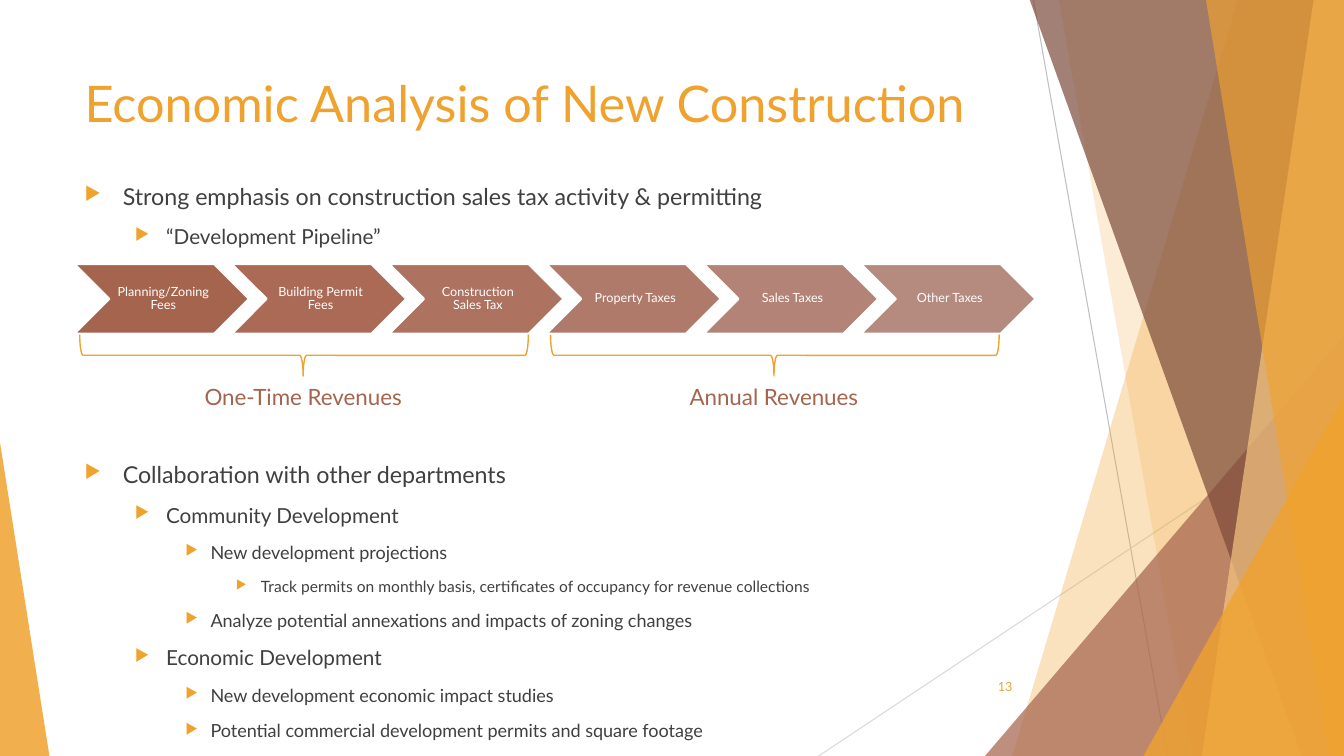
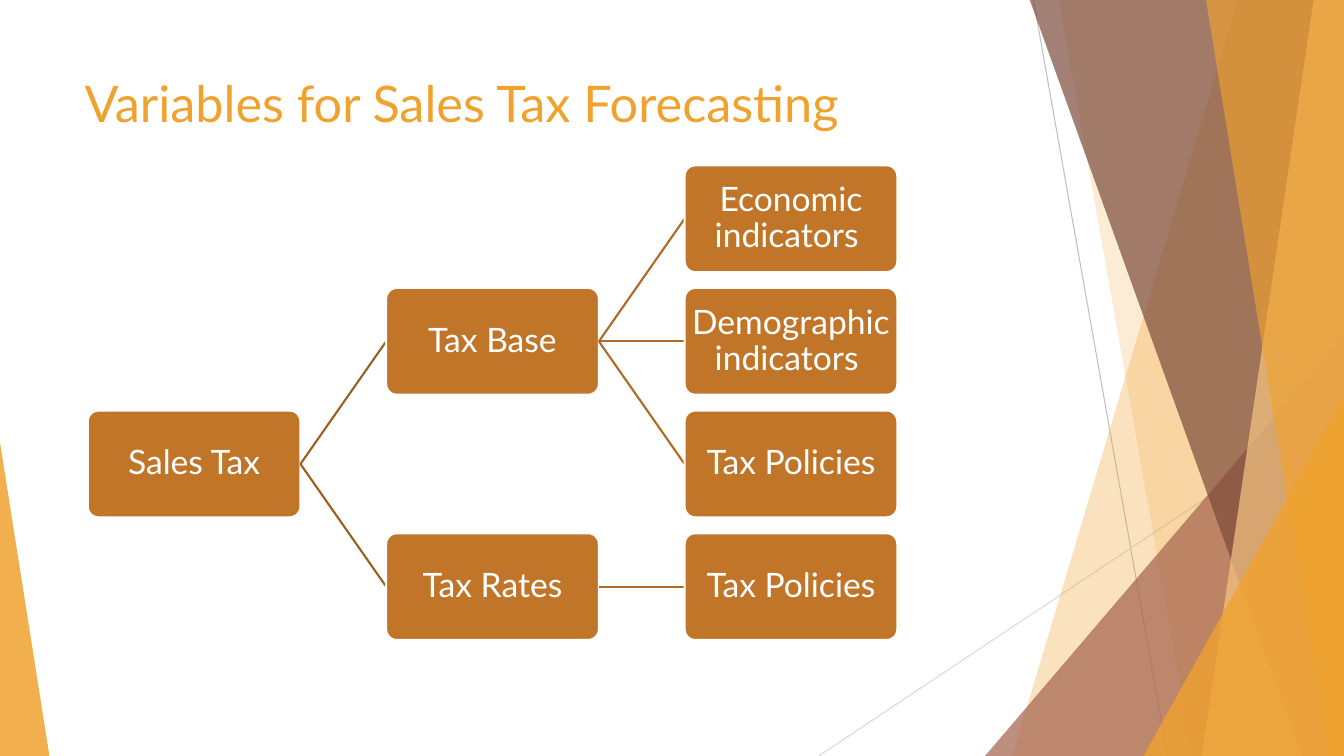
"""Build two slides on the economics of construction and sales tax forecasting."""
from dataclasses import dataclass
from typing import Any

from pptx import Presentation
from pptx import util as u
from pptx.dml import color
from pptx.enum import shapes, text
from pptx.oxml import xmlchemy

WIDTH, HEIGHT = 13.33, 7.5
FONT = "Lato"
COLORS = {
    "amber": "F0A22E",
    "sand": "F6C782",
    "rust": "A5644E",
    "brown": "7C4B3B",
    "ink": "404040",
    "white": "FFFFFF",
    "gray": "BFBFBF",
    "pale_gray": "D9D9D9",
    "node": "C17529",
    "first_link": "9B5E21",
    "second_link": "AF6A25",
    "step_1": "A5644E",
    "step_2": "AB6A55",
    "step_3": "AD7260",
    "step_4": "B07A6B",
    "step_5": "B28376",
    "step_6": "B58B80",
}
BOX_FORMAT = {"word_wrap": True, "vertical_anchor": text.MSO_ANCHOR.TOP}
LABEL_FORMAT = {"word_wrap": False}
NUMBER_FORMAT = {"word_wrap": True, "vertical_anchor": text.MSO_ANCHOR.MIDDLE}
CENTERED = {"alignment": text.PP_ALIGN.CENTER, "line_spacing": 0.9}


@dataclass(frozen=True)
class Band:
    top: float
    bottom: float
    color: str
    alpha: int


@dataclass(frozen=True)
class Triangle:
    left: float
    top: float
    width: float
    apex: float
    color: str
    alpha: int


@dataclass(frozen=True)
class Level:
    margin: float
    hanging: float
    size: float


@dataclass(frozen=True)
class Bullet:
    level: int
    words: str
    before: float = 10


@dataclass(frozen=True)
class Group:
    words: str
    brace_left: float
    label_left: float
    label_width: float


@dataclass(frozen=True)
class Node:
    words: str
    column: int
    row: int
    children: tuple["Node", ...] = ()


BACKDROP = (
    Band(12.28, 10.04, "amber", 30),
    Band(10.5, 11.83, "amber", 20),
    Triangle(9.77, 3.33, 3.56, 1, "rust", 72),
    Band(10.21, 12.91, "brown", 70),
    Band(13.03, 11.92, "sand", 70),
    Band(11.96, 13.18, "amber", 65),
    Triangle(11.34, 3.93, 1.99, 1, "amber", 80),
    Triangle(0, 4.39, 0.49, 0, "amber", 85),
)
LEVELS = (
    Level(0.38, 0.38, 16.6),
    Level(0.81, 0.31, 14.8),
    Level(1.25, 0.25, 12.9),
    Level(1.75, 0.25, 11.1),
)
BULLETS = (
    Bullet(0, "Strong emphasis on construction sales tax activity & permitting"),
    Bullet(1, "“Development Pipeline”"),
    Bullet(0, "Collaboration with other departments", 151),
    Bullet(1, "Community Development"),
    Bullet(2, "New development projections"),
    Bullet(3, "Track permits on monthly basis, certificates of occupancy for revenue collections"),
    Bullet(2, "Analyze potential annexations and impacts of zoning changes"),
    Bullet(1, "Economic Development"),
    Bullet(2, "New development economic impact studies"),
    Bullet(2, "Potential commercial development permits and square footage"),
)
STEPS = (
    "Planning/Zoning Fees",
    "Building Permit Fees",
    "Construction Sales Tax",
    "Property Taxes",
    "Sales Taxes",
    "Other Taxes",
)
GROUPS = (
    Group("One-Time Revenues", 2.81, 1.93, 2.18),
    Group("Annual Revenues", 7.48, 6.74, 1.89),
)
TREE = Node("Sales Tax", 0, 2, (
    Node("Tax Base", 1, 1, (
        Node("Economic indicators ", 2, 0),
        Node("Demographic indicators ", 2, 1),
        Node("Tax Policies", 2, 2),
    )),
    Node("Tax Rates", 1, 3, (Node("Tax Policies", 2, 3),)),
))
LINK_COLORS = ("first_link", "second_link")


def rgb(name: str) -> color.RGBColor:
    """Return the named colour."""
    return color.RGBColor.from_string(COLORS[name])


def apply_format(target: Any, values: dict[str, Any]) -> None:
    """Set every attribute listed in the format values."""
    for name, value in values.items():
        setattr(target, name, value)


def add_child(parent: Any, tag: str, **attributes: str) -> Any:
    """Append an XML element with its attributes and return it."""
    child = xmlchemy.OxmlElement(tag)
    for name, value in attributes.items():
        child.set(name, value)
    parent.append(child)
    return child


def write(paragraph: Any, words: str, size: float, name: str, **values: Any) -> None:
    """Write one run and format its paragraph."""
    run = paragraph.add_run()
    run.text = words
    apply_format(run.font, {"name": FONT, "size": u.Pt(size)})
    run.font.color.rgb = rgb(name)
    apply_format(paragraph, values)


def paint(shape: Any, fill: str | None, line: str | None = None,
          width: float = 1.5, alpha: int = 100) -> None:
    """Set fill, outline and transparency and remove the shadow."""
    shape.shadow.inherit = False
    if fill:
        shape.fill.solid()
        shape.fill.fore_color.rgb = rgb(fill)
        if alpha < 100:
            tint = shape.element.spPr.find(".//" + xmlchemy.OxmlElement("a:srgbClr").tag)
            add_child(tint, "a:alpha", val=str(alpha * 1000))
    else:
        shape.fill.background()
    if line:
        shape.line.color.rgb = rgb(line)
        shape.line.width = u.Pt(width)
    else:
        shape.line.fill.background()


def add_preset(slide: Any, kind: Any, box: tuple[float, ...], *adjustments: float) -> Any:
    """Add a preset shape with its adjustments."""
    shape = slide.shapes.add_shape(kind, *map(u.Inches, box))
    for index, value in enumerate(adjustments):
        shape.adjustments[index] = value
    return shape


def add_line(slide: Any, ends: tuple[float, ...], name: str, width: float) -> Any:
    """Add a straight connector without a shadow."""
    connector = slide.shapes.add_connector(shapes.MSO_CONNECTOR.STRAIGHT, *map(u.Inches, ends))
    connector.line.color.rgb = rgb(name)
    connector.line.width = u.Pt(width)
    add_child(connector.element.spPr, "a:effectLst")
    return connector


def add_frame(slide: Any, box: tuple[float, ...], values: dict[str, Any]) -> Any:
    """Add a text box and return its text frame."""
    frame = slide.shapes.add_textbox(*map(u.Inches, box)).text_frame
    apply_format(frame, values)
    return frame


def label_shape(shape: Any, words: str, size: float, margins: tuple[float, ...]) -> None:
    """Centre white text inside a shape."""
    frame = shape.text_frame
    sides = ("margin_left", "margin_top", "margin_right", "margin_bottom")
    apply_format(frame, NUMBER_FORMAT | dict(zip(sides, map(u.Inches, margins))))
    write(frame.paragraphs[0], words, size, "white", **CENTERED)


def add_facet(slide: Any, facet: Band | Triangle) -> None:
    """Draw one translucent piece of the backdrop."""
    if isinstance(facet, Band):
        top = -0.01
        corners = ((WIDTH, top), (WIDTH, HEIGHT), (facet.bottom, HEIGHT))
        builder = slide.shapes.build_freeform(u.Inches(facet.top), u.Inches(top))
        builder.add_line_segments([(u.Inches(x), u.Inches(y)) for x, y in corners])
        shape = builder.convert_to_shape()
    else:
        box = (facet.left, facet.top, facet.width, HEIGHT - facet.top)
        shape = add_preset(slide, shapes.MSO_SHAPE.ISOSCELES_TRIANGLE, box, facet.apex)
    paint(shape, facet.color, alpha=facet.alpha)


def add_slide(presentation: Any, title: str) -> Any:
    """Add a slide with the shared backdrop and title."""
    slide = presentation.slides.add_slide(presentation.slide_layouts[6])
    add_line(slide, (10.25, 0, 11.58, HEIGHT), "gray", 0.75)
    add_line(slide, (WIDTH, 4.03, 8.12, HEIGHT), "pale_gray", 0.75)
    for facet in BACKDROP:
        add_facet(slide, facet)
    frame = add_frame(slide, (0.74, 0.67, 9.4, 1.44), BOX_FORMAT)
    write(frame.paragraphs[0], title, 36, "amber")
    return slide


def add_bullets(slide: Any) -> None:
    """Write the outline with triangular bullets."""
    frame = add_frame(slide, (0.74, 1.76, 9.17, 5.4), BOX_FORMAT)
    for index, bullet in enumerate(BULLETS):
        level = LEVELS[bullet.level]
        paragraph = frame.add_paragraph() if index else frame.paragraphs[0]
        write(paragraph, bullet.words, level.size, "ink",
              level=bullet.level, space_before=u.Pt(bullet.before))
        properties = paragraph._p.get_or_add_pPr()
        properties.set("marL", str(u.Inches(level.margin)))
        properties.set("indent", str(-u.Inches(level.hanging)))
        add_child(add_child(properties, "a:buClr"), "a:srgbClr", val=COLORS["amber"])
        add_child(properties, "a:buSzPct", val="80000")
        add_child(properties, "a:buChar", char="▶")


def add_pipeline(slide: Any) -> None:
    """Draw the chevrons with the braces that group them."""
    for index, words in enumerate(STEPS):
        box = (0.74 + 1.56 * index, 2.62, 1.73, 0.69)
        chevron = add_preset(slide, shapes.MSO_SHAPE.CHEVRON, box)
        paint(chevron, f"step_{index + 1}", "white")
        label_shape(chevron, words, 9, (0.04, 0.01, 0.01, 0.01))
    for group in GROUPS:
        box = (group.brace_left, 1.3, 0.41, 4.45)
        brace = add_preset(slide, shapes.MSO_SHAPE.RIGHT_BRACE, box, 0.083, 0.502)
        brace.rotation = 90
        paint(brace, None, "amber", 1)
        frame = add_frame(slide, (group.label_left, 3.75, group.label_width, 0.37), LABEL_FORMAT)
        write(frame.paragraphs[0], group.words, 16, "rust")


def add_node(slide: Any, node: Node) -> Any:
    """Draw a tree node and, joined to it, its children."""
    box = (0.87 + 2.96 * node.column, 1.64 + 3.65 / 3 * node.row, 2.11, 1.06)
    shape = add_preset(slide, shapes.MSO_SHAPE.ROUNDED_RECTANGLE, box, 0.1)
    paint(shape, "node", "white")
    label_shape(shape, node.words, 24, (0.02,) * 4)
    for child in node.children:
        link = add_line(slide, (0, 0, 0, 0), LINK_COLORS[node.column], 1.5)
        link.begin_connect(shape, 3)
        link.end_connect(add_node(slide, child), 1)
    return shape


def main() -> None:
    """Build and save the presentation."""
    presentation = Presentation()
    apply_format(presentation, {"slide_width": u.Inches(WIDTH), "slide_height": u.Inches(HEIGHT)})
    slide = add_slide(presentation, "Economic Analysis of New Construction")
    add_bullets(slide)
    add_pipeline(slide)
    frame = add_frame(slide, (9.39, 6.61, 0.75, 0.4), NUMBER_FORMAT)
    write(frame.paragraphs[0], "13", 9, "amber", alignment=text.PP_ALIGN.RIGHT)
    add_node(add_slide(presentation, "Variables for Sales Tax Forecasting"), TREE)
    presentation.save("out.pptx")


if __name__ == "__main__":
    main()
